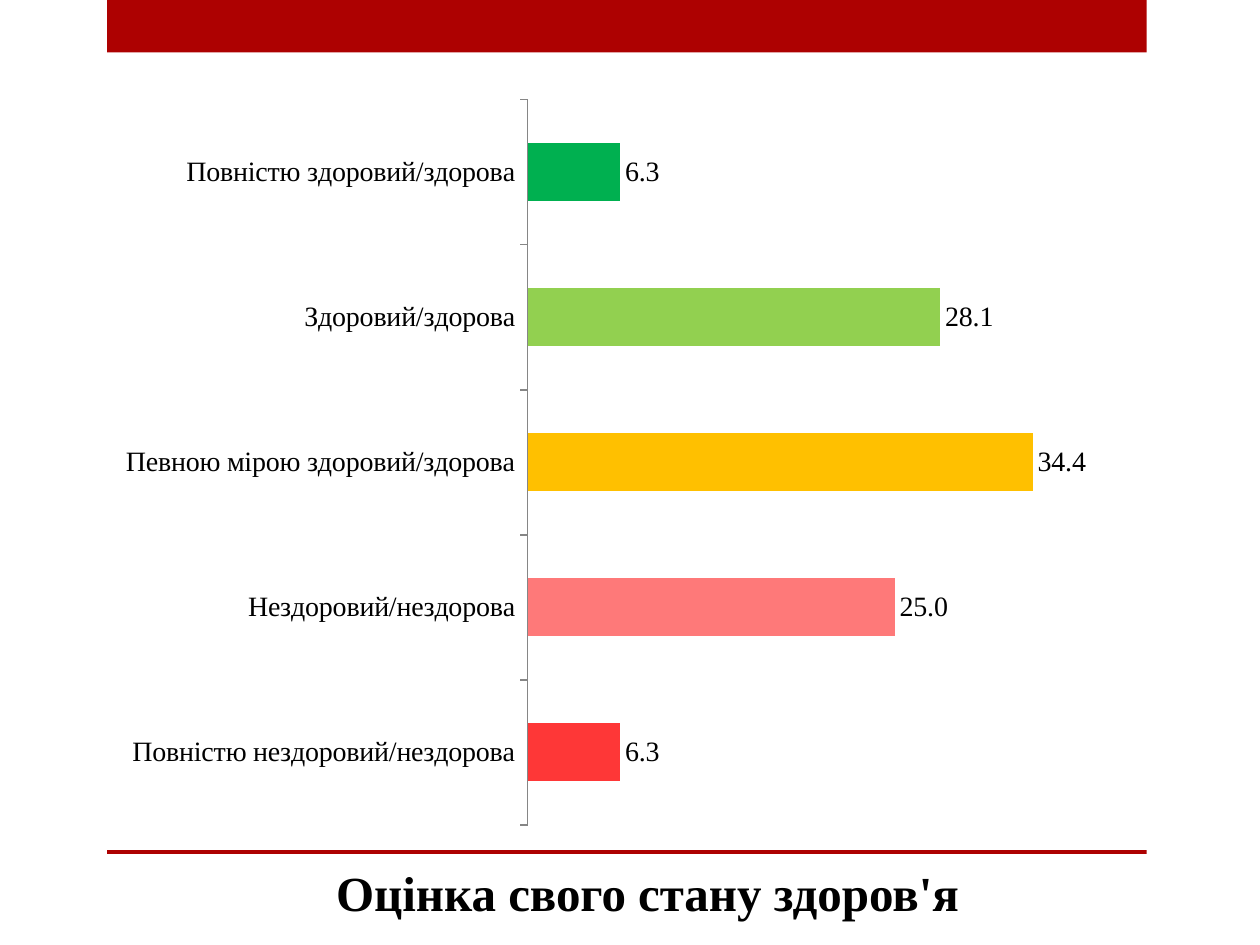
"""Build a slide with a bar chart of self-rated health."""
from lxml import etree
from pptx import Presentation
from pptx.chart.data import CategoryChartData
from pptx.dml.color import RGBColor
from pptx.enum.chart import XL_CHART_TYPE, XL_LABEL_POSITION, XL_TICK_MARK
from pptx.enum.shapes import MSO_SHAPE
from pptx.enum.text import MSO_ANCHOR, PP_ALIGN
from pptx.oxml.ns import qn
from pptx.util import Pt

BAR = XL_CHART_TYPE.BAR_CLUSTERED
OUTSIDE_END = XL_LABEL_POSITION.OUTSIDE_END
TICK_OUT = XL_TICK_MARK.OUTSIDE
RECT = MSO_SHAPE.RECTANGLE
BOTTOM = MSO_ANCHOR.BOTTOM
CENTER = PP_ALIGN.CENTER

FONT = "Times New Roman"
NUMBER_FORMAT = "###0.0"
COLORS = {
    "band": "AD0101",
    "text": "000000",
    "axis": "868686",
    "very_healthy": "00B050",
    "healthy": "92D050",
    "partly": "FFC000",
    "unhealthy": "FE7979",
    "very_unhealthy": "FE3737",
}
RATINGS = [
    ("Повністю здоровий/здорова", 6.3, "very_healthy"),
    ("Здоровий/здорова", 28.1, "healthy"),
    ("Певною мірою здоровий/здорова", 34.4, "partly"),
    ("Нездоровий/нездорова", 25.0, "unhealthy"),
    ("Повністю нездоровий/нездорова", 6.3, "very_unhealthy"),
]
PLOT_LAYOUT = {"x": 0.41, "y": 0.02, "w": 0.57, "h": 0.96}


def rgb(name):
    return RGBColor.from_string(COLORS[name])


def set_fill(fill, color):
    fill.solid()
    fill.fore_color.rgb = rgb(color)


def set_font(font, size, color="text", bold=False):
    font.name = FONT
    font.size = Pt(size)
    font.bold = bold
    font.color.rgb = rgb(color)


def add_band(s, left, top, width, height):
    sp = s.shapes.add_shape(RECT, Pt(left), Pt(top), Pt(width), Pt(height))
    sp.shadow.inherit = False
    set_fill(sp.fill, "band")
    sp.line.fill.background()


def add_text(s, text, left, top, width, height, size, bold=False,
             align=CENTER, anchor=BOTTOM):
    box = s.shapes.add_textbox(Pt(left), Pt(top), Pt(width), Pt(height))
    tf = box.text_frame
    tf.word_wrap = True
    tf.vertical_anchor = anchor
    p = tf.paragraphs[0]
    p.alignment = align
    r = p.add_run()
    r.text = text
    set_font(r.font, size, bold=bold)


def set_plot_layout(chart):
    area = chart.element.find(".//" + qn("c:plotArea"))
    for old in area.findall(qn("c:layout")):
        area.remove(old)
    layout = etree.Element(qn("c:layout"))
    area.insert(0, layout)
    manual = etree.SubElement(layout, qn("c:manualLayout"))
    settings = {"layoutTarget": "inner", "xMode": "edge", "yMode": "edge", **PLOT_LAYOUT}
    for tag, value in settings.items():
        etree.SubElement(manual, qn("c:" + tag)).set("val", str(value))


def style_axes(chart):
    axis = chart.category_axis
    axis.reverse_order = True
    axis.major_tick_mark = TICK_OUT
    axis.format.line.color.rgb = rgb("axis")
    axis.format.line.width = Pt(1)
    axis = chart.value_axis
    axis.visible = False
    axis.has_major_gridlines = False
    axis.minimum_scale = 0
    axis.maximum_scale = 40


def add_bar_chart(s, left, top, width, height):
    data = CategoryChartData(number_format=NUMBER_FORMAT)
    data.categories = [label for label, _, _ in RATINGS]
    data.add_series("Series 1", [value for _, value, _ in RATINGS])
    frame = s.shapes.add_chart(BAR, Pt(left), Pt(top), Pt(width), Pt(height), data)
    chart = frame.chart
    chart.has_legend = False
    chart.has_title = False
    set_font(chart.font, 16)
    style_axes(chart)
    set_plot_layout(chart)

    plot = chart.plots[0]
    plot.gap_width = 150
    plot.vary_by_categories = False
    plot.has_data_labels = True
    labels = plot.data_labels
    labels.show_value = True
    labels.number_format = NUMBER_FORMAT
    labels.number_format_is_linked = False
    labels.position = OUTSIDE_END
    set_font(labels.font, 16)

    series = plot.series[0]
    set_fill(series.format.fill, "band")
    for i, (_, _, color) in enumerate(RATINGS):
        set_fill(series.points[i].format.fill, color)


def main():
    prs = Presentation()
    prs.slide_width, prs.slide_height = Pt(720), Pt(540)
    s = prs.slides.add_slide(prs.slide_layouts[6])
    add_band(s, 61.2, 0, 594, 30)
    add_band(s, 61.2, 485.8, 594, 2.2)
    add_text(s, "Оцінка свого стану здоров'я", 20, 479.5, 700, 50.4, size=28, bold=True)
    add_bar_chart(s, 60, 48.2, 589, 432)
    prs.save("out.pptx")


if __name__ == "__main__":
    main()
